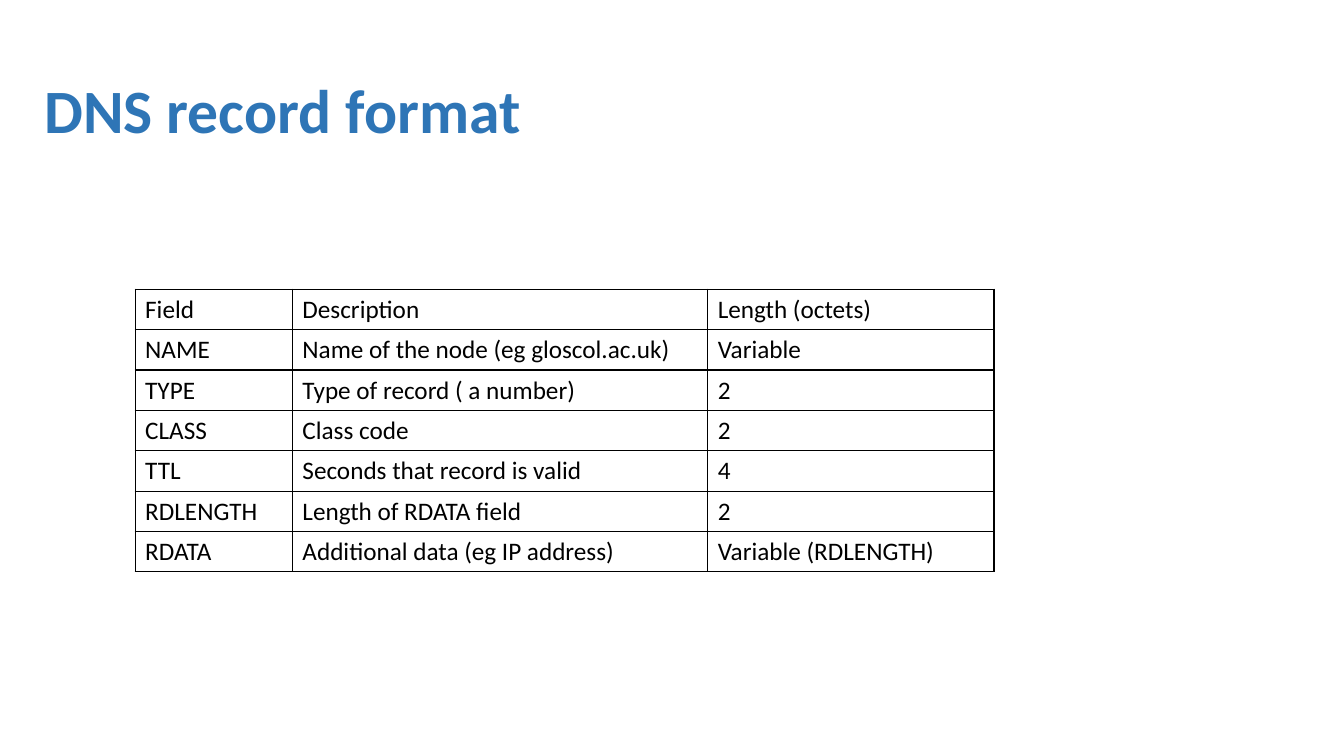
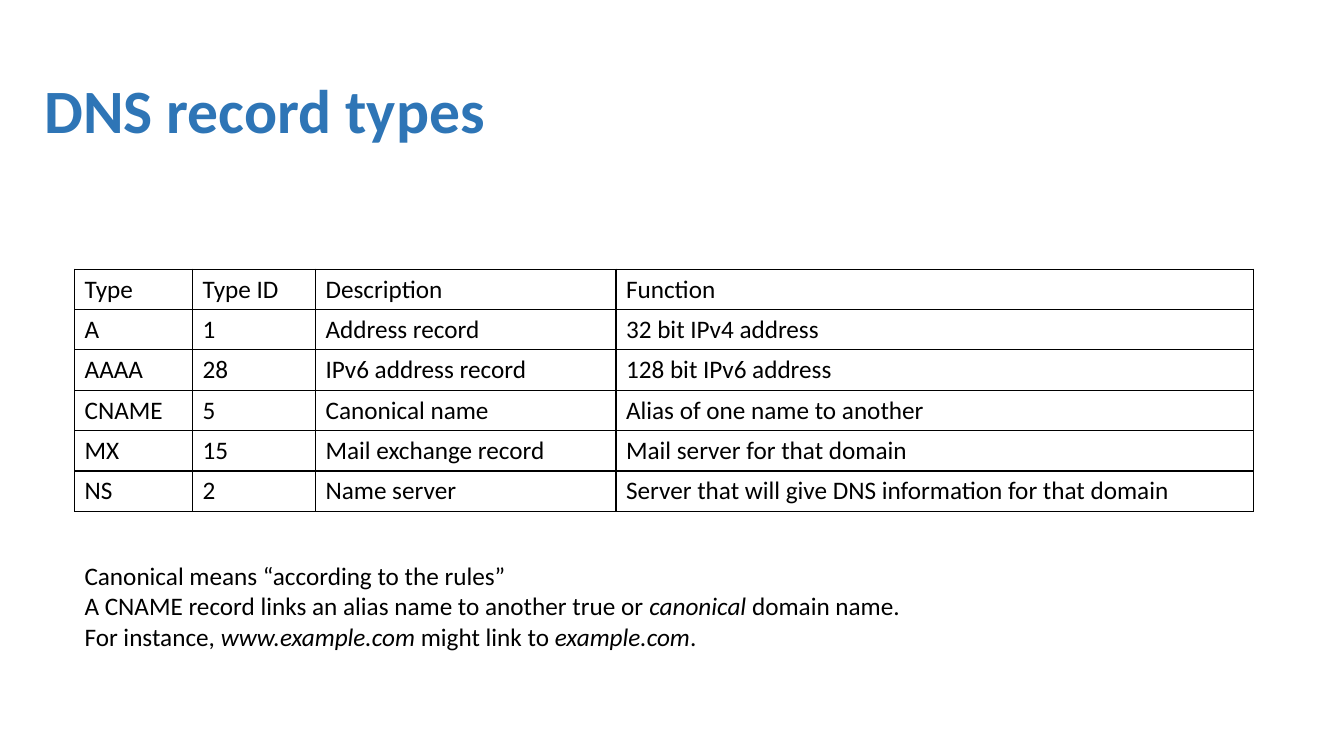
import pptx
import pptx.dml.color
import pptx.enum.text
import pptx.oxml
import pptx.oxml.ns
import pptx.util

PX = 9144
FONT = "Calibri"
BLUE, BLACK = "2E75B6", "000000"
TITLE_BOX = (34, 40, 1268, 145)
ROW_HEIGHT = 40

SLIDES = [
    {
        "title": "DNS record format",
        "table_at": (134, 287),
        "columns": [156, 412, 284],
        "rows": [
            ("Field", "Description", "Length (octets)"),
            ("NAME", "Name of the node (eg gloscol.ac.uk)", "Variable"),
            ("TYPE", "Type of record ( a number)", "2"),
            ("CLASS", "Class code", "2"),
            ("TTL", "Seconds that record is valid", "4"),
            ("RDLENGTH", "Length of RDATA field", "2"),
            ("RDATA", "Additional data (eg IP address)", "Variable (RDLENGTH)"),
        ],
    },
    {
        "title": "DNS record types",
        "table_at": (74, 267),
        "columns": [117, 122, 298, 632],
        "rows": [
            ("Type", "Type ID", "Description", "Function"),
            ("A", "1", "Address record", "32 bit IPv4 address"),
            ("AAAA", "28", "IPv6 address record", "128 bit IPv6 address"),
            ("CNAME", "5", "Canonical name", "Alias of one name to another"),
            ("MX", "15", "Mail exchange record", "Mail server for that domain"),
            ("NS", "2", "Name server", "Server that will give DNS information for that domain"),
        ],
        "note_box": (74, 551, 983, 101),
        "note": [
            [("Canonical means “according to the rules”", False)],
            [("A CNAME record links an alias name to another true or ", False),
             ("canonical", True), (" domain name.", False)],
            [("For instance, ", False), ("www.example.com", True),
             (" might link to ", False), ("example.com", True), (".", False)],
        ],
    },
]


def px(*lengths):
    return [pptx.util.Emu(n * PX) for n in lengths]


def rgb(value):
    return pptx.dml.color.RGBColor.from_string(value)


def write(p, text, size=18, color=BLACK, bold=False, italic=False):
    r = p.add_run()
    r.text = text
    r.font.name = FONT
    r.font.size = pptx.util.Pt(size)
    r.font.bold = bold
    r.font.italic = italic
    r.font.color.rgb = rgb(color)


def add_box(slide, box):
    tf = slide.shapes.add_textbox(*px(*box)).text_frame
    tf.word_wrap = True
    return tf


def add_title(slide, text):
    tf = add_box(slide, TITLE_BOX)
    tf.vertical_anchor = pptx.enum.text.MSO_ANCHOR.MIDDLE
    p = tf.paragraphs[0]
    p.line_spacing = 0.9
    write(p, text, size=44, color=BLUE, bold=True)


def add_borders(cell):
    tc_pr = cell._tc.get_or_add_tcPr()
    for side in ("lnL", "lnR", "lnT", "lnB"):
        tc_pr.append(pptx.oxml.parse_xml(
            f'<a:{side} {pptx.oxml.ns.nsdecls("a")} w="{pptx.util.Pt(1)}">'
            f'<a:solidFill><a:srgbClr val="{BLACK}"/></a:solidFill></a:{side}>'))


def add_table(slide, at, columns, rows):
    size = (sum(columns), ROW_HEIGHT * len(rows))
    table = slide.shapes.add_table(len(rows), len(columns), *px(*at, *size)).table
    table.first_row = table.horz_banding = False
    for column, width in zip(table.columns, px(*columns)):
        column.width = width
    for row, texts in zip(table.rows, rows):
        row.height = px(ROW_HEIGHT)[0]
        for cell, text in zip(row.cells, texts):
            add_borders(cell)
            cell.fill.background()
            write(cell.text_frame.paragraphs[0], text)


def add_note(slide, box, paragraphs):
    tf = add_box(slide, box)
    for i, runs in enumerate(paragraphs):
        p = tf.add_paragraph() if i else tf.paragraphs[0]
        for text, italic in runs:
            write(p, text, italic=italic)


def main():
    prs = pptx.Presentation()
    prs.slide_width, prs.slide_height = px(1333, 750)
    for content in SLIDES:
        slide = prs.slides.add_slide(prs.slide_layouts[6])
        add_title(slide, content["title"])
        add_table(slide, content["table_at"], content["columns"], content["rows"])
        if "note" in content:
            add_note(slide, content["note_box"], content["note"])
    prs.save("out.pptx")


if __name__ == "__main__":
    main()
